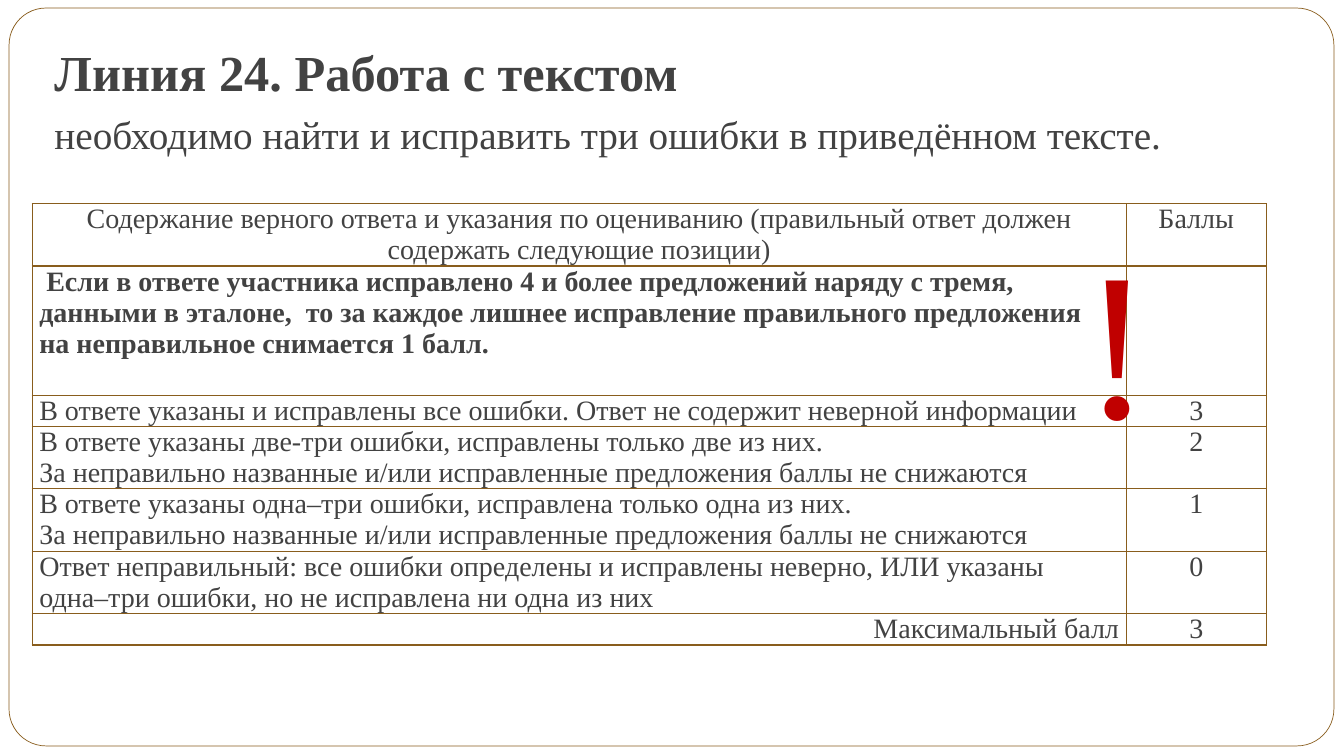
import pptx
import pptx.util
import pptx.dml.color
import pptx.enum.shapes
import pptx.enum.text
import pptx.oxml.ns
import lxml.etree

PX = 9144  # EMU in one px, 100 px to the inch
FONT = "Times New Roman"
COLORS = {"paper": "FFFFFF", "border": "895D1D", "text": "424242", "alert": "C00000"}
ALIGN = pptx.enum.text.PP_ALIGN

# Criterion, its alignment, bold, points, row height in px
SCORE_ROWS = [
    (["Содержание верного ответа и указания по оцениванию (правильный ответ должен "
      "содержать следующие позиции)"], ALIGN.CENTER, False, "Баллы", 62),
    ([" Если в ответе участника исправлено 4 и более предложений наряду с тремя, "
      "данными в эталоне,  то за каждое лишнее исправление правильного предложения "
      "на неправильное снимается 1 балл."], ALIGN.LEFT, True, "", 128),
    (["В ответе указаны и исправлены все ошибки. Ответ не содержит неверной информации"],
     ALIGN.LEFT, False, "3", 31),
    (["В ответе указаны две-три ошибки, исправлены только две из них. ",
      "За неправильно названные и/или исправленные предложения баллы не снижаются"],
     ALIGN.LEFT, False, "2", 62),
    (["В ответе указаны одна–три ошибки, исправлена только одна из них.",
      "За неправильно названные и/или исправленные предложения баллы не снижаются"],
     ALIGN.LEFT, False, "1", 62),
    (["Ответ неправильный: все ошибки определены и исправлены неверно, ИЛИ указаны "
      "одна–три ошибки, но не исправлена ни одна из них"], ALIGN.LEFT, False, "0", 62),
    (["Максимальный балл"], ALIGN.RIGHT, False, "3", 31),
]


def px(*lengths):
    return [length * PX for length in lengths]


def color(name):
    return pptx.dml.color.RGBColor.from_string(COLORS[name])


def add_run(paragraph, text, size, bold=False, color_name="text"):
    run = paragraph.add_run()
    run.text = text
    run.font.name = FONT
    run.font.size = pptx.util.Pt(size)
    run.font.bold = bold
    run.font.color.rgb = color(color_name)


def set_margins(box, left, top, right, bottom):
    box.margin_left, box.margin_top, box.margin_right, box.margin_bottom = px(
        left, top, right, bottom)


def add_frame(slide):
    frame = slide.shapes.add_shape(
        pptx.enum.shapes.MSO_SHAPE.ROUNDED_RECTANGLE, *px(9, 8, 1314, 732))
    frame.adjustments[0] = 0.05
    frame.shadow.inherit = False
    frame.fill.solid()
    frame.fill.fore_color.rgb = color("paper")
    frame.line.color.rgb = color("border")
    frame.line.width = pptx.util.Pt(0.5)
    # Behind the placeholders
    slide.shapes._spTree.insert(2, frame._element)


def fill_heading(placeholder):
    placeholder.left, placeholder.top, placeholder.width, placeholder.height = px(
        44, 36, 1235, 130)
    text_frame = placeholder.text_frame
    text_frame.auto_size = pptx.enum.text.MSO_AUTO_SIZE.NONE
    set_margins(text_frame, 10, 5, 10, 5)
    lines = [("Линия 24. Работа с текстом", 36, True, 0),
             ("необходимо найти и исправить три ошибки в приведённом тексте.", 28, False, 5.8)]
    for index, (text, size, bold, space_before) in enumerate(lines):
        paragraph = text_frame.add_paragraph() if index else text_frame.paragraphs[0]
        properties = paragraph._p.get_or_add_pPr()
        properties.set("marL", "0")
        properties.set("indent", "0")
        lxml.etree.SubElement(properties, pptx.oxml.ns.qn("a:buNone"))
        paragraph.space_before = pptx.util.Pt(space_before)
        add_run(paragraph, text, size, bold)


def set_borders(cell):
    properties = cell._tc.get_or_add_tcPr()
    for index, side in enumerate(("lnL", "lnR", "lnT", "lnB")):
        line = lxml.etree.Element(pptx.oxml.ns.qn("a:" + side), w="12700")
        fill = lxml.etree.SubElement(line, pptx.oxml.ns.qn("a:solidFill"))
        lxml.etree.SubElement(fill, pptx.oxml.ns.qn("a:srgbClr"), val=COLORS["border"])
        properties.insert(index, line)


def fill_cell(cell, lines, alignment, bold=False):
    cell.fill.background()
    set_borders(cell)
    # The bold rule keeps clear of the exclamation mark
    set_margins(cell, 7, 0, 30 if bold else 7, 0)
    for index, text in enumerate(lines):
        paragraph = cell.text_frame.add_paragraph() if index else cell.text_frame.paragraphs[0]
        paragraph.alignment = alignment
        if text:
            add_run(paragraph, text, 20, bold)


def add_score_table(slide):
    height = sum(row[-1] for row in SCORE_ROWS)
    table = slide.shapes.add_table(len(SCORE_ROWS), 2, *px(32, 202, 1224, height)).table
    table.first_row = table.horz_banding = False
    table.columns[0].width, table.columns[1].width = px(1085, 139)
    for index, (criterion, alignment, bold, points, row_height) in enumerate(SCORE_ROWS):
        table.rows[index].height = row_height * PX
        fill_cell(table.cell(index, 0), criterion, alignment, bold)
        fill_cell(table.cell(index, 1), [points], ALIGN.CENTER)


def add_exclamation(slide):
    text_frame = slide.shapes.add_textbox(*px(1064, 202, 56, 263)).text_frame
    text_frame.word_wrap = True
    text_frame.vertical_anchor = pptx.enum.text.MSO_ANCHOR.BOTTOM
    set_margins(text_frame, 10, 5, 10, 8)
    text_frame.paragraphs[0].alignment = ALIGN.CENTER
    add_run(text_frame.paragraphs[0], "!", 150, color_name="alert")


def main():
    presentation = pptx.Presentation()
    presentation.slide_width, presentation.slide_height = px(1333, 750)
    slide = presentation.slides.add_slide(presentation.slide_layouts[1])
    slide.background.fill.solid()
    slide.background.fill.fore_color.rgb = color("paper")

    # The heading and its task share the body placeholder
    title = slide.shapes.title._element
    title.getparent().remove(title)
    add_frame(slide)
    fill_heading(slide.placeholders[1])

    # Scoring criteria with the warning mark on top
    add_score_table(slide)
    add_exclamation(slide)
    presentation.save("out.pptx")


if __name__ == "__main__":
    main()
